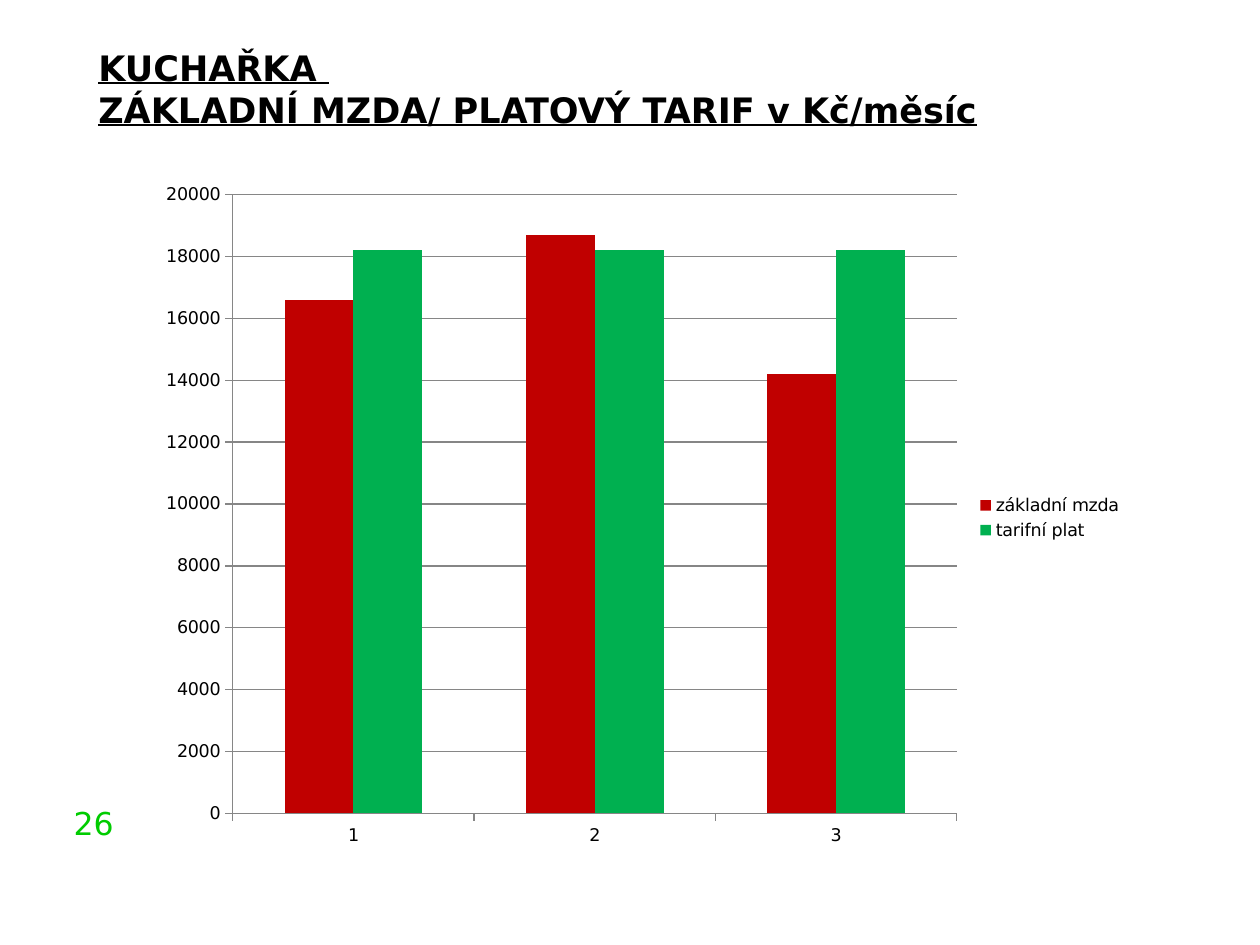
from typing import NamedTuple

from lxml import etree
from pptx import Presentation
from pptx import util as u
from pptx.chart.data import CategoryChartData
from pptx.dml.color import RGBColor
from pptx.enum import chart as chart_enum
from pptx.enum import text
from pptx.oxml.ns import qn

WIDTH, HEIGHT = u.Inches(10), u.Inches(7.5)
FONT = "DejaVu Sans"
BLACK = RGBColor(0x00, 0x00, 0x00)
GREY = RGBColor(0x86, 0x86, 0x86)
RED = RGBColor(0xC0, 0x00, 0x00)
GREEN = RGBColor(0x00, 0xB0, 0x50)
BRIGHT_GREEN = RGBColor(0x00, 0xCC, 0x00)


class Area(NamedTuple):
    """A rectangle in percent of the slide's width and height."""
    left: float
    top: float
    width: float
    height: float

    def lengths(self) -> tuple:
        return tuple(u.Emu(round(share * side / 100))
                     for share, side in zip(self, (WIDTH, HEIGHT) * 2))


class WageSeries(NamedTuple):
    name: str
    values: tuple
    color: RGBColor


TITLE_AREA = Area(6.8, 2.8, 84.9, 17.6)
CHART_AREA = Area(11.4, 18.4, 78.7, 72.8)
NUMBER_AREA = Area(0, 84.4, 10, 7.73)
TITLE_LINES = ("KUCHAŘKA ", "ZÁKLADNÍ MZDA/ PLATOVÝ TARIF v\u00a0Kč/měsíc")
CATEGORIES = ("1", "2", "3")
WAGES = (
    WageSeries("základní mzda", (16600, 18700, 14200), RED),
    WageSeries("tarifní plat", (18200, 18200, 18200), GREEN),
)
PLOT_LAYOUT = {"x": 0.09, "y": 0.03, "w": 0.73, "h": 0.9}


def style_font(font, size: float, color: RGBColor) -> None:
    font.name = FONT
    font.size = u.Pt(size)
    font.color.rgb = color


def add_title(slide) -> None:
    title = slide.shapes.title
    title.left, title.top, title.width, title.height = TITLE_AREA.lengths()
    frame = title.text_frame
    frame.auto_size = text.MSO_AUTO_SIZE.NONE
    frame.vertical_anchor = text.MSO_ANCHOR.MIDDLE
    frame.margin_bottom = u.Inches(0.38)
    paragraph = frame.paragraphs[0]
    paragraph.alignment = text.PP_ALIGN.LEFT
    for index, line in enumerate(TITLE_LINES):
        if index:
            paragraph.add_line_break()
        run = paragraph.add_run()
        run.text = line
        style_font(run.font, 20, BLACK)
        run.font.bold = run.font.underline = True


def add_slide_number(slide) -> None:
    box = slide.shapes.add_textbox(*NUMBER_AREA.lengths())
    box.text_frame.word_wrap = True
    paragraph = box.text_frame.paragraphs[0]
    paragraph.alignment = text.PP_ALIGN.RIGHT
    run = paragraph.add_run()
    run.text = "26"
    style_font(run.font, 18, BRIGHT_GREEN)


def style_line(line) -> None:
    line.color.rgb = GREY
    line.width = u.Pt(0.75)


def fix_plot_area(chart) -> None:
    """Pin the inner plot area to fixed shares of the chart."""
    plot_area = chart.plots[0]._element.getparent()
    for old in plot_area.findall(qn("c:layout")):
        plot_area.remove(old)
    layout = etree.Element(qn("c:layout"))
    plot_area.insert(0, layout)
    manual = etree.SubElement(layout, qn("c:manualLayout"))
    settings = {"layoutTarget": "inner", "xMode": "edge", "yMode": "edge",
                **PLOT_LAYOUT}
    for tag, value in settings.items():
        etree.SubElement(manual, qn(f"c:{tag}")).set("val", str(value))


def add_wage_chart(slide) -> None:
    data = CategoryChartData(number_format="General")
    data.categories = CATEGORIES
    for wage in WAGES:
        data.add_series(wage.name, wage.values)
    chart = slide.shapes.add_chart(
        chart_enum.XL_CHART_TYPE.COLUMN_CLUSTERED,
        *CHART_AREA.lengths(), data).chart
    style_font(chart.font, 10, BLACK)
    chart.has_title = False
    chart.has_legend = True
    chart.legend.position = chart_enum.XL_LEGEND_POSITION.RIGHT
    chart.legend.include_in_layout = False

    plot = chart.plots[0]
    plot.vary_by_categories = False
    plot.gap_width = 150
    plot.overlap = 0
    for series, wage in zip(plot.series, WAGES):
        series.format.fill.solid()
        series.format.fill.fore_color.rgb = wage.color

    for axis in (chart.category_axis, chart.value_axis):
        axis.major_tick_mark = chart_enum.XL_TICK_MARK.OUTSIDE
        axis.minor_tick_mark = chart_enum.XL_TICK_MARK.NONE
        style_line(axis.format.line)
    values = chart.value_axis
    values.minimum_scale, values.maximum_scale = 0, 20000
    values.major_unit = 2000
    values.has_major_gridlines = True
    style_line(values.major_gridlines.format.line)
    fix_plot_area(chart)


def main() -> None:
    presentation = Presentation()
    presentation.slide_width, presentation.slide_height = WIDTH, HEIGHT
    title_only = presentation.slide_layouts[5]
    slide = presentation.slides.add_slide(title_only)
    add_slide_number(slide)
    add_title(slide)
    add_wage_chart(slide)
    presentation.save("out.pptx")


if __name__ == "__main__":
    main()
